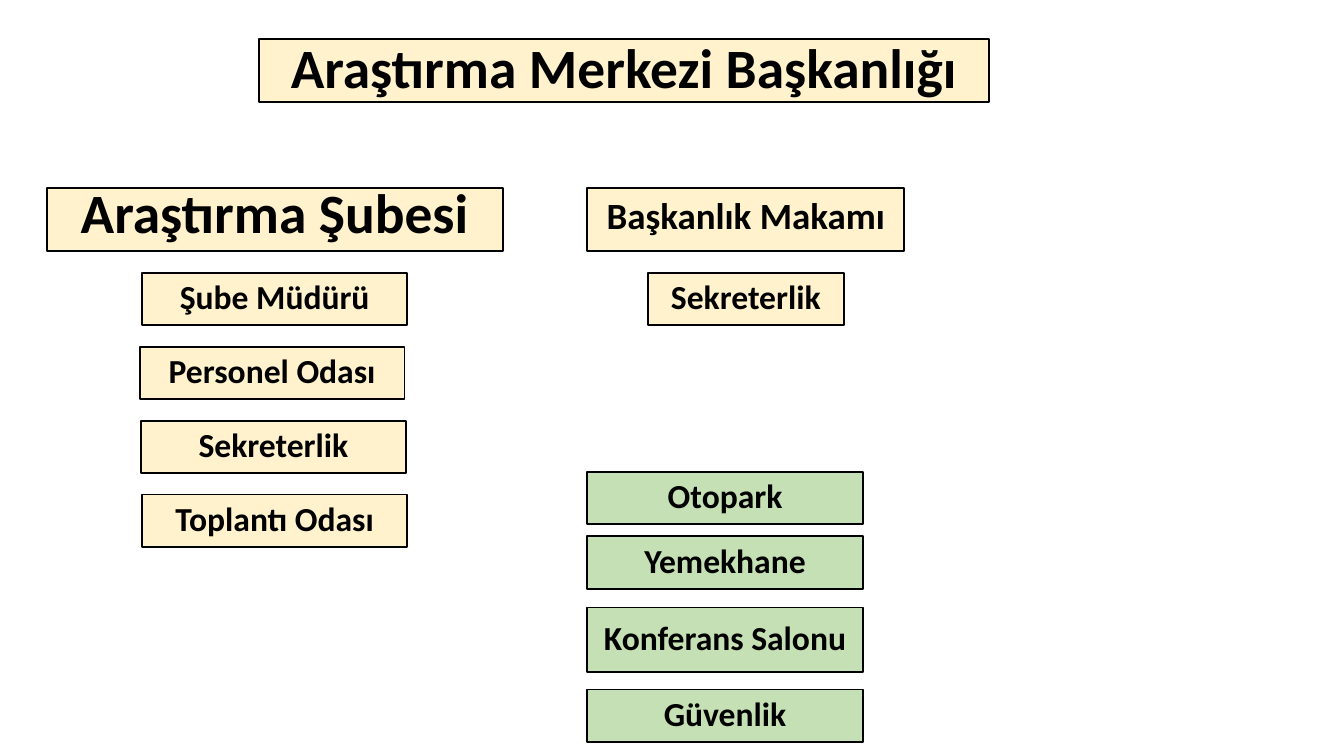
from pptx import Presentation
from pptx.dml.color import RGBColor
from pptx.enum import shapes, text
from pptx.util import Inches, Pt

CREAM = RGBColor(0xFF, 0xF2, 0xCC)
GREEN = RGBColor(0xC5, 0xE0, 0xB4)
BLACK = RGBColor(0x00, 0x00, 0x00)

TITLE = "Araştırma Merkezi Başkanlığı"
BRANCH = "Araştırma Şubesi"
# Room name and left edge
BRANCH_ROOMS = [
    ("Şube Müdürü", 1.06),
    ("Personel Odası", 1.04),
    ("Sekreterlik", 1.05),
    ("Toplantı Odası", 1.06),
]
OFFICE = "Başkanlık Makamı"
OFFICE_ROOM = "Sekreterlik"
# Facility name, top edge and height
FACILITIES = [
    ("Otopark", 3.51, 0.39),
    ("Yemekhane", 3.99, 0.39),
    ("Konferans Salonu", 4.52, 0.48),
    ("Güvenlik", 5.13, 0.39),
]

SLIDE_WIDTH = 10
SLIDE_HEIGHT = SLIDE_WIDTH * 9 / 16
HEADING_TOP, HEADING_HEIGHT = 1.4, 0.47
ROOM_TOP, ROOM_HEIGHT, ROOM_STEP = 2.03, 0.39, 0.55
RIGHT_COLUMN = 4.37


def add_box(slide, words, left, top, width, height,
            size=18, fill=CREAM, line_spacing=0.9):
    shape = slide.shapes.add_shape(
        shapes.MSO_SHAPE.RECTANGLE,
        Inches(left), Inches(top), Inches(width), Inches(height))
    shape.shadow.inherit = False
    shape.fill.solid()
    shape.fill.fore_color.rgb = fill
    shape.line.color.rgb = BLACK
    shape.line.width = Pt(1)

    frame = shape.text_frame
    frame.word_wrap = True
    frame.vertical_anchor = text.MSO_ANCHOR.MIDDLE
    frame.margin_left = frame.margin_right = Inches(0.05)
    paragraph = frame.paragraphs[0]
    paragraph.alignment = text.PP_ALIGN.CENTER
    paragraph.line_spacing = line_spacing
    run = paragraph.add_run()
    run.text = words
    run.font.name = "Calibri"
    run.font.size = Pt(size)
    run.font.bold = True
    run.font.color.rgb = BLACK


def main():
    presentation = Presentation()
    presentation.slide_width = Inches(SLIDE_WIDTH)
    presentation.slide_height = Inches(SLIDE_HEIGHT)
    slide = presentation.slides.add_slide(presentation.slide_layouts[6])

    add_box(slide, TITLE, 1.93, 0.29, 5.43, HEADING_HEIGHT, size=29.7)

    add_box(slide, BRANCH, 0.35, HEADING_TOP, 3.39, HEADING_HEIGHT,
            size=29.7, line_spacing=0.7)
    for index, (room, left) in enumerate(BRANCH_ROOMS):
        add_box(slide, room, left, ROOM_TOP + index * ROOM_STEP,
                1.97, ROOM_HEIGHT)

    add_box(slide, OFFICE, RIGHT_COLUMN, HEADING_TOP, 2.36, HEADING_HEIGHT,
            size=19.8, line_spacing=0.7)
    add_box(slide, OFFICE_ROOM, 4.82, ROOM_TOP, 1.46, ROOM_HEIGHT)

    for facility, top, height in FACILITIES:
        add_box(slide, facility, RIGHT_COLUMN, top, 2.05, height, fill=GREEN)

    presentation.save("out.pptx")


if __name__ == "__main__":
    main()
